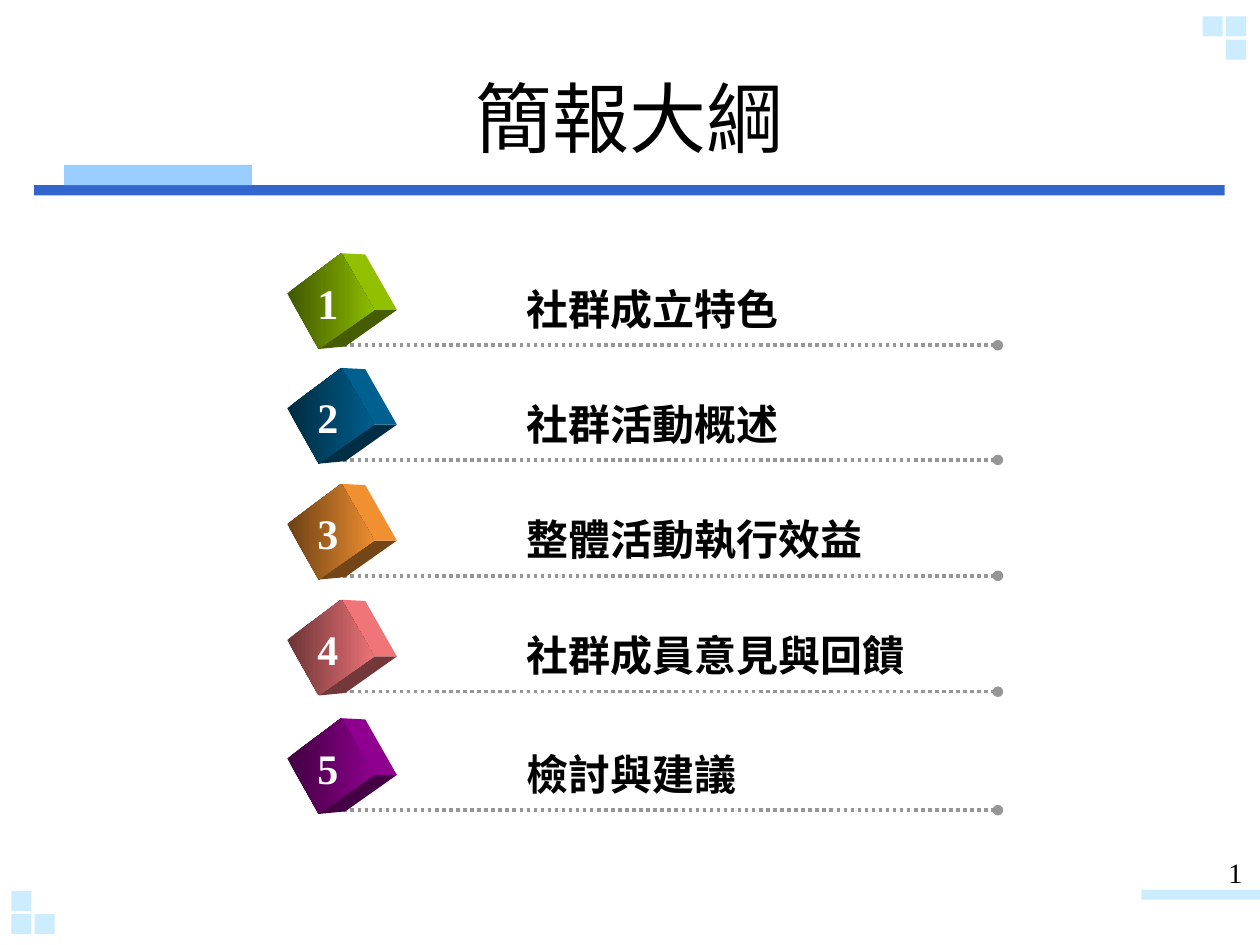
from lxml import etree
from pptx import Presentation, util as u
from pptx.dml.color import RGBColor
from pptx.enum import dml, shapes, text
from pptx.oxml import ns

WIDTH, HEIGHT = 10, 7.5
CJK, SERIF = "Noto Sans CJK SC", "Times New Roman"
COLORS = {"rule": "3366CC", "tab": "99CCFF", "pale": "CCECFF",
          "dots": "969696", "ink": "000000", "white": "FFFFFF"}

TITLE = "簡報大綱"
PAGE = "1"
# topic, cube colour, height of its dotted line, width of its text
TOPICS = [
    ("社群成立特色", "99CC00", 2.74, 2.22),
    ("社群活動概述", "006699", 3.65, 2.22),
    ("整體活動執行效益", "FF9933", 4.57, 2.89),
    ("社群成員意見與回饋", "FF7C80", 5.49, 3.23),
    ("檢討與建議", "990099", 6.43, 1.89),
]
BARS = [
    ("rule", 0.27, 1.47, 9.45, 0.08),
    ("tab", 0.51, 1.31, 1.49, 0.16),
    ("pale", 9.06, 7.06, 0.94, 0.08),
]
SQUARE, SQUARE_STEP = 0.16, 0.185
# left, top, and the (column, row) cells that are filled
CORNERS = [
    (9.545, 0.13, [(0, 0), (1, 0), (1, 1)]),
    (0.09, 7.07, [(0, 0), (0, 1), (1, 1)]),
]
LINE_LEFT, LINE_RIGHT = 2.67, 7.92
# cube corners, measured down from the dotted line
CUBE = {
    "left": (2.28, -0.41), "top": (2.71, -0.73), "inner": (2.97, -0.28),
    "bottom": (2.53, 0.03), "back_top": (2.9, -0.72),
    "back_right": (3.15, -0.28), "back_bottom": (2.74, 0.01),
}
# corners of a face and its shades, as shares of the cube colour
FACES = [
    (("inner", "back_right", "back_bottom", "bottom"), (0.45,)),
    (("top", "back_top", "back_right", "inner"), (0.94,)),
    (("left", "top", "inner", "bottom"), (0.42, 0.92)),
]


def rgb(color, share=1):
    return RGBColor(*(round(part * share) for part in bytes.fromhex(color)))


def add_bar(slide, color, *box):
    shape = slide.shapes.add_shape(shapes.MSO_SHAPE.RECTANGLE, *map(u.Inches, box))
    shape.shadow.inherit = False
    shape.fill.solid()
    shape.fill.fore_color.rgb = rgb(COLORS[color])
    shape.line.fill.background()


def add_text(slide, words, box, size, font, color="ink", bold=False,
             align=text.PP_ALIGN.LEFT, anchor=text.MSO_ANCHOR.TOP, wrap=False):
    frame = slide.shapes.add_textbox(*map(u.Inches, box)).text_frame
    frame.word_wrap = wrap
    frame.vertical_anchor = anchor
    paragraph = frame.paragraphs[0]
    paragraph.alignment = align
    run = paragraph.add_run()
    run.text = words
    run.font.size = u.Pt(size)
    run.font.name = font
    run.font.bold = bold
    run.font.color.rgb = rgb(COLORS[color])
    east_asian = etree.SubElement(run.font._element, ns.qn("a:ea"))
    east_asian.set("typeface", font)


def add_dotted_line(slide, y):
    line = slide.shapes.add_connector(
        shapes.MSO_CONNECTOR.STRAIGHT,
        *map(u.Inches, (LINE_LEFT, y, LINE_RIGHT, y)))
    line.line.width = u.Pt(2)
    line.line.color.rgb = rgb(COLORS["dots"])
    line.line.dash_style = dml.MSO_LINE.ROUND_DOT
    properties = line._element.spPr
    end = etree.SubElement(properties.find(ns.qn("a:ln")), ns.qn("a:tailEnd"))
    end.set("type", "oval")
    etree.SubElement(properties, ns.qn("a:effectLst"))


def add_cube(slide, color, y):
    for corners, shades in FACES:
        points = [(u.Inches(CUBE[name][0]), u.Inches(y + CUBE[name][1]))
                  for name in corners]
        builder = slide.shapes.build_freeform(*points[0])
        builder.add_line_segments(points[1:], close=True)
        face = builder.convert_to_shape()
        face.shadow.inherit = False
        face.line.fill.background()
        if len(shades) == 1:
            face.fill.solid()
            face.fill.fore_color.rgb = rgb(color, shades[0])
        else:
            face.fill.gradient()
            face.fill.gradient_angle = 0
            for stop, shade in zip(face.fill.gradient_stops, shades):
                stop.color.rgb = rgb(color, shade)


def main():
    presentation = Presentation()
    presentation.slide_width = u.Inches(WIDTH)
    presentation.slide_height = u.Inches(HEIGHT)
    slide = presentation.slides.add_slide(presentation.slide_layouts[6])

    for bar in BARS:
        add_bar(slide, *bar)
    for left, top, cells in CORNERS:
        for column, row in cells:
            add_bar(slide, "pale", left + column * SQUARE_STEP,
                    top + row * SQUARE_STEP, SQUARE, SQUARE)

    add_text(slide, TITLE, (0.5, 0.3, 9, 1.25), 44, CJK, wrap=True,
             align=text.PP_ALIGN.CENTER, anchor=text.MSO_ANCHOR.MIDDLE)
    for number, (topic, color, y, width) in enumerate(TOPICS, 1):
        add_dotted_line(slide, y)
        add_cube(slide, color, y)
        add_text(slide, topic, (4.08, y - 0.54, width, 0.51), 24, CJK, bold=True)
        add_text(slide, str(number), (2.42, y - 0.59, 0.37, 0.51), 24, SERIF,
                 "white", bold=True)
    add_text(slide, PAGE, (9.65, 6.74, 0.28, 0.31), 16, SERIF, wrap=True,
             align=text.PP_ALIGN.RIGHT)

    presentation.save("out.pptx")


if __name__ == "__main__":
    main()
